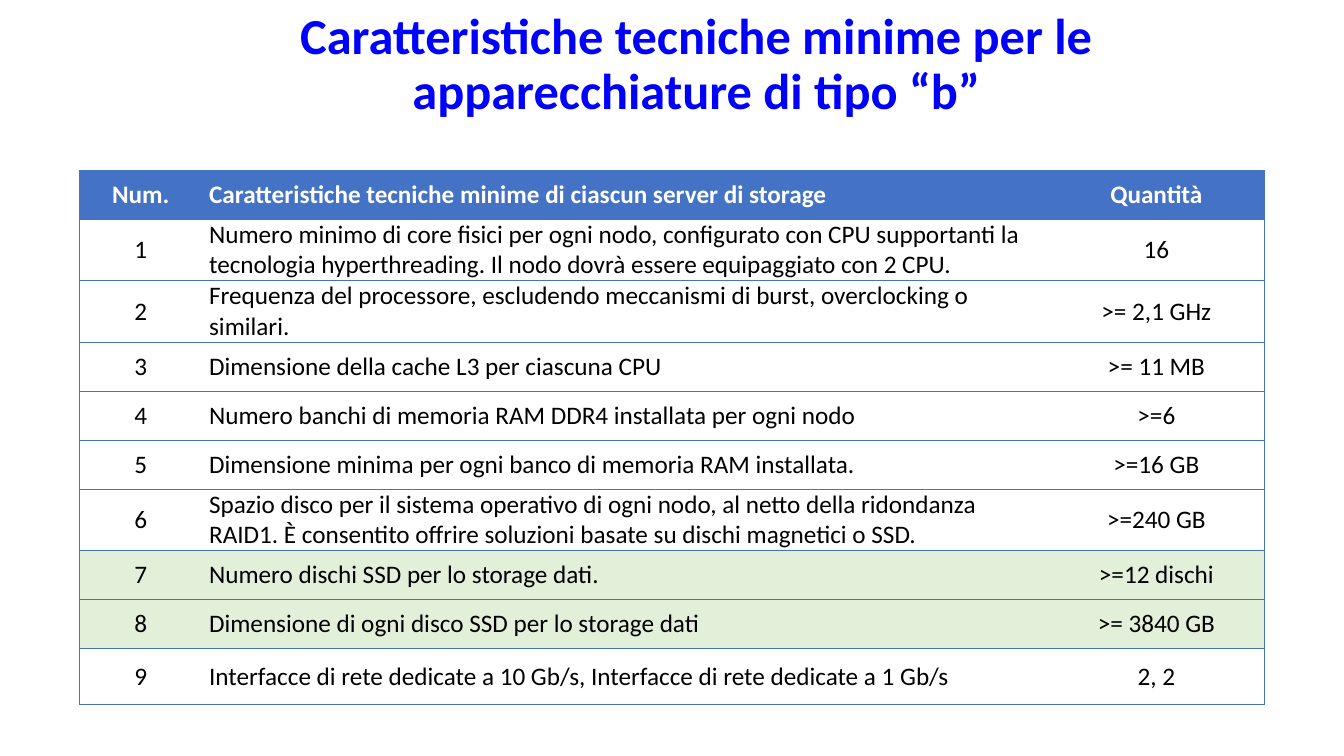
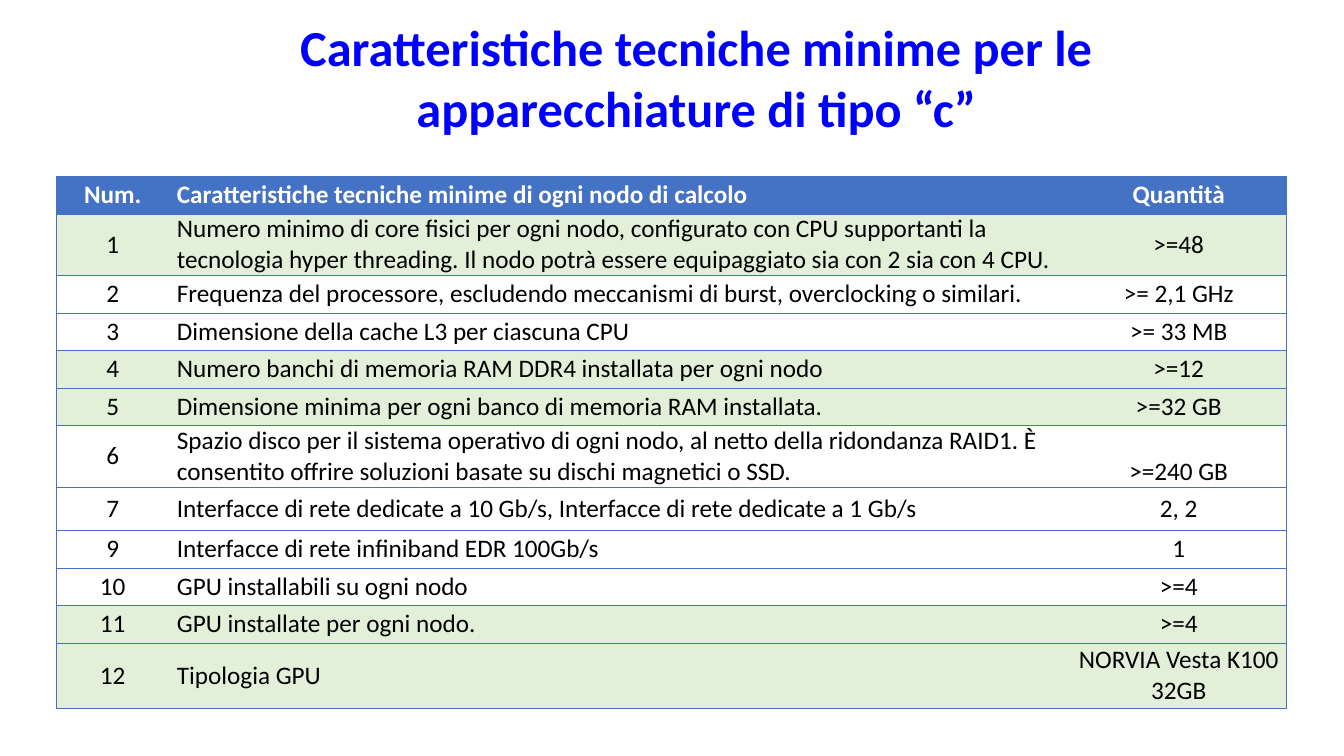
from dataclasses import dataclass
from lxml.etree import SubElement
from pptx import Presentation
from pptx.dml.color import RGBColor
from pptx.enum.text import MSO_ANCHOR, MSO_AUTO_SIZE, PP_ALIGN
from pptx.oxml.ns import qn
from pptx.util import Pt


@dataclass(frozen=True)
class Theme:
    font: str = "Calibri"
    title_size: int = 36
    table_size: int = 18
    title: str = "0000FF"
    header: str = "4472C4"
    header_text: str = "FFFFFF"
    text: str = "000000"
    highlight: str = "E2F0D9"
    border: str = "4472C4"
    border_width: float = 0.5


@dataclass(frozen=True)
class Row:
    number: str
    feature: str
    quantity: str
    height: float
    highlighted: bool = False
    quantity_anchor: MSO_ANCHOR = MSO_ANCHOR.MIDDLE


THEME = Theme()
PLAIN_STYLE = "{2D5ABB26-0587-4C30-8999-92F81FD0307C}"
ALIGNMENTS = (PP_ALIGN.CENTER, PP_ALIGN.LEFT, PP_ALIGN.CENTER)
TWO_LINES = 44

FREQUENCY = "Frequenza del processore, escludendo meccanismi di burst, overclocking o similari."
CACHE = "Dimensione della cache L3 per ciascuna CPU"
RAM_BANKS = "Numero banchi di memoria RAM DDR4 installata per ogni nodo"
RAM_SIZE = "Dimensione minima per ogni banco di memoria RAM installata."
SYSTEM_DISK = ("Spazio disco per il sistema operativo di ogni nodo, al netto della ridondanza RAID1. "
               "È consentito offrire soluzioni basate su dischi magnetici o SSD.")
NETWORK = "Interfacce di rete dedicate a 10 Gb/s, Interfacce di rete dedicate a 1 Gb/s"

STORAGE_LINE = 35
STORAGE_ROWS = [
    Row("Num.", "Caratteristiche tecniche minime di ciascun server di storage", "Quantità", STORAGE_LINE),
    Row("1", "Numero minimo di core fisici per ogni nodo, configurato con CPU supportanti la tecnologia "
        "hyperthreading. Il nodo dovrà essere equipaggiato con 2 CPU.", "16", TWO_LINES),
    Row("2", FREQUENCY, ">= 2,1 GHz", TWO_LINES),
    Row("3", CACHE, ">= 11 MB", STORAGE_LINE),
    Row("4", RAM_BANKS, ">=6", STORAGE_LINE),
    Row("5", RAM_SIZE, ">=16 GB", STORAGE_LINE),
    Row("6", SYSTEM_DISK, ">=240 GB", TWO_LINES),
    Row("7", "Numero dischi SSD per lo storage dati.", ">=12 dischi", STORAGE_LINE, True),
    Row("8", "Dimensione di ogni disco SSD per lo storage dati", ">= 3840 GB", STORAGE_LINE, True),
    Row("9", NETWORK, "2, 2", 40),
]

COMPUTE_LINE = 26.8
COMPUTE_ROWS = [
    Row("Num.", "Caratteristiche tecniche minime di ogni nodo di calcolo", "Quantità", COMPUTE_LINE),
    Row("1", "Numero minimo di core fisici per ogni nodo, configurato con CPU supportanti la tecnologia "
        "hyper threading. Il nodo potrà essere equipaggiato sia con 2 sia con 4 CPU.", ">=48", TWO_LINES, True),
    Row("2", FREQUENCY, ">= 2,1 GHz", COMPUTE_LINE),
    Row("3", CACHE, ">= 33 MB", COMPUTE_LINE),
    Row("4", RAM_BANKS, ">=12", COMPUTE_LINE, True),
    Row("5", RAM_SIZE, ">=32 GB", COMPUTE_LINE, True),
    Row("6", SYSTEM_DISK, ">=240 GB", TWO_LINES, quantity_anchor=MSO_ANCHOR.BOTTOM),
    Row("7", NETWORK, "2, 2", 31),
    Row("9", "Interfacce di rete infiniband EDR 100Gb/s", "1", COMPUTE_LINE),
    Row("10", "GPU installabili su ogni nodo", ">=4", COMPUTE_LINE),
    Row("11", "GPU installate per ogni nodo.", ">=4", COMPUTE_LINE, True),
    Row("12", "Tipologia GPU", "NORVIA Vesta K100 32GB", 46.5, True),
]


def format_paragraph(p, size, color, bold, alignment):
    p.alignment = alignment
    for r in p.runs:
        r.font.name = THEME.font
        r.font.size = Pt(size)
        r.font.bold = bold
        r.font.color.rgb = RGBColor.from_string(color)


def add_title_slide(prs, title, top, height, line_spacing):
    """Add a title-only slide and return it with its title in place."""
    s = prs.slides.add_slide(prs.slide_layouts[5])
    sp = s.shapes.title
    sp.left, sp.top, sp.width, sp.height = Pt(48), Pt(top), Pt(863), Pt(height)
    tf = sp.text_frame
    tf.text = title
    tf.word_wrap = True
    tf.auto_size = MSO_AUTO_SIZE.NONE
    tf.vertical_anchor = MSO_ANCHOR.TOP
    tf.margin_left = Pt(43.2)
    p = tf.paragraphs[0]
    p.line_spacing = line_spacing
    format_paragraph(p, THEME.title_size, THEME.title, True, PP_ALIGN.CENTER)
    return s


def add_borders(cell, sides):
    """Draw the given sides, in the order L, R, T, B; call before filling the cell."""
    tc_pr = cell._tc.get_or_add_tcPr()
    for side in sides:
        ln = SubElement(tc_pr, qn(f"a:ln{side}"), w=str(Pt(THEME.border_width)))
        fill = SubElement(ln, qn("a:solidFill"))
        SubElement(fill, qn("a:srgbClr"), val=THEME.border)


def fill_cell(cell, text, alignment, anchor, background, is_header):
    cell.margin_left = cell.margin_right = Pt(5.4)
    cell.margin_top = cell.margin_bottom = 0
    cell.vertical_anchor = anchor
    if background:
        cell.fill.solid()
        cell.fill.fore_color.rgb = RGBColor.from_string(background)
    else:
        cell.fill.background()
    cell.text_frame.text = text
    color = THEME.header_text if is_header else THEME.text
    format_paragraph(cell.text_frame.paragraphs[0], THEME.table_size, color, is_header, alignment)


def add_feature_table(s, left, top, widths, rows):
    height = sum(row.height for row in rows)
    frame = s.shapes.add_table(len(rows), len(widths), Pt(left), Pt(top), Pt(sum(widths)), Pt(height))
    table = frame.table
    table.horz_banding = False
    table._tbl.tblPr.find(qn("a:tableStyleId")).text = PLAIN_STYLE
    for column, width in zip(table.columns, widths):
        column.width = Pt(width)
    for i, row in enumerate(rows):
        table.rows[i].height = Pt(row.height)
        is_header = i == 0
        background = THEME.header if is_header else THEME.highlight if row.highlighted else None
        texts = (row.number, row.feature, row.quantity)
        anchors = (MSO_ANCHOR.MIDDLE, MSO_ANCHOR.MIDDLE, row.quantity_anchor)
        for j, (text, alignment, anchor) in enumerate(zip(texts, ALIGNMENTS, anchors)):
            cell = table.cell(i, j)
            add_borders(cell, ("LTB", "TB", "RTB")[j])
            fill_cell(cell, text, alignment, anchor, background, is_header)


def main():
    prs = Presentation()
    prs.slide_width, prs.slide_height = Pt(960), Pt(540)
    title = "Caratteristiche tecniche minime per le apparecchiature di tipo “{}”"

    s = add_title_slide(prs, title.format("b"), 4.5, 86, 0.9)
    add_feature_table(s, 57, 121.5, (87, 605, 154), STORAGE_ROWS)

    s = add_title_slide(prs, title.format("c"), 8, 94, 1.0)
    add_feature_table(s, 40, 126, (81, 644, 154), COMPUTE_ROWS)

    prs.save("out.pptx")


if __name__ == "__main__":
    main()
